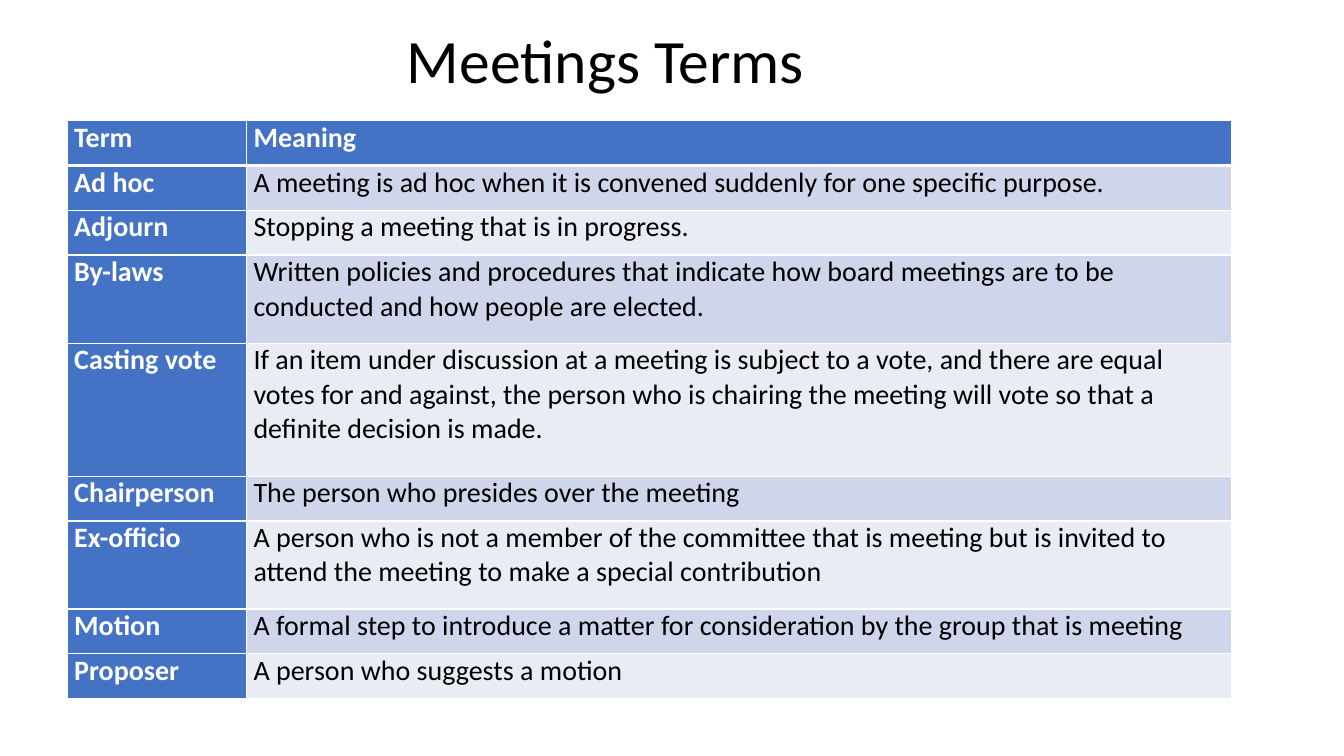
import pptx
import pptx.dml.color
import pptx.enum.text
import pptx.oxml
import pptx.oxml.ns
import pptx.util
from pptx.util import Cm

COLORS = {
    "black": "000000",
    "white": "FFFFFF",
    "blue": "4472C4",
    "dark band": "CFD5EA",
    "light band": "E9EBF5",
}

# Term, meaning and number of text lines the row is sized for
TERMS = [
    ("Term", "Meaning", 1),
    ("Ad hoc", "A meeting is ad hoc when it is convened suddenly for one specific purpose.", 1),
    ("Adjourn", "Stopping a meeting that is in progress.", 1),
    ("By-laws", "Written policies and procedures that indicate how board meetings "
                "are to be conducted and how people are elected.", 2),
    ("Casting vote", "If an item under discussion at a meeting is subject to a vote, "
                     "and there are equal votes for and against, the person who is "
                     "chairing the meeting will vote so that a definite decision is made.", 3),
    ("Chairperson", "The person who presides over the meeting", 1),
    ("Ex-officio", "A person who is not a member of the committee that is meeting but is "
                   "invited to attend the meeting to make a special contribution", 2),
    ("Motion", "A formal step to introduce a matter for consideration by the group "
               "that is meeting", 1),
    ("Proposer", "A person who suggests a motion", 1),
]
ROW_HEIGHTS = {1: Cm(1.13), 2: Cm(2.22), 3: Cm(3.35)}
COLUMN_WIDTHS = [Cm(4.52), Cm(24.82)]


class SlideBuilder:
    font_name = "Calibri"
    title_size = 44
    table_size = 20

    def __init__(self, presentation):
        self.slide = presentation.slides.add_slide(presentation.slide_layouts[5])

    def add_run(self, paragraph, text, size, color, bold=False):
        run = paragraph.add_run()
        run.text = text
        run.font.name = self.font_name
        run.font.size = pptx.util.Pt(size)
        run.font.bold = bold
        run.font.color.rgb = pptx.dml.color.RGBColor.from_string(COLORS[color])

    def add_title(self, text, left, top, width, height):
        title = self.slide.shapes.title
        title.left, title.top, title.width, title.height = left, top, width, height
        title.text_frame.vertical_anchor = pptx.enum.text.MSO_ANCHOR.MIDDLE
        paragraph = title.text_frame.paragraphs[0]
        paragraph.alignment = pptx.enum.text.PP_ALIGN.LEFT
        paragraph.line_spacing = 0.9
        self.add_run(paragraph, text, self.title_size, "black")

    def set_borders(self, cell, top=1, bottom=1):
        """Draw white borders, with widths in points."""
        properties = cell._tc.get_or_add_tcPr()
        for side, width in (("L", 1), ("R", 1), ("T", top), ("B", bottom)):
            properties.append(pptx.oxml.parse_xml(
                f'<a:ln{side} {pptx.oxml.ns.nsdecls("a")} w="{pptx.util.Pt(width)}">'
                f'<a:solidFill><a:srgbClr val="{COLORS["white"]}"/></a:solidFill>'
                f'</a:ln{side}>'))

    def fill_cell(self, cell, text, fill, color, bold):
        cell.margin_left = cell.margin_right = Cm(0.18)
        cell.margin_top = cell.margin_bottom = 0
        cell.fill.solid()
        cell.fill.fore_color.rgb = pptx.dml.color.RGBColor.from_string(COLORS[fill])
        self.add_run(cell.text_frame.paragraphs[0], text, self.table_size, color, bold)

    def add_terms_table(self, terms, left, top):
        heights = [ROW_HEIGHTS[lines] for _, _, lines in terms]
        table = self.slide.shapes.add_table(
            len(terms), len(COLUMN_WIDTHS), left, top,
            sum(COLUMN_WIDTHS), sum(heights)).table
        table.first_col = True
        for column, width in zip(table.columns, COLUMN_WIDTHS):
            column.width = width
        for row_index, (term, meaning, _) in enumerate(terms):
            table.rows[row_index].height = heights[row_index]
            for column_index, text in enumerate((term, meaning)):
                cell = table.cell(row_index, column_index)
                is_heading = row_index == 0 or column_index == 0
                band = "dark band" if row_index % 2 else "light band"
                self.set_borders(cell, top=3 if row_index == 1 else 1,
                                 bottom=3 if row_index == 0 else 1)
                self.fill_cell(cell, text,
                               fill="blue" if is_heading else band,
                               color="white" if is_heading else "black",
                               bold=is_heading)


def main():
    presentation = pptx.Presentation()
    presentation.slide_width = Cm(33.87)
    presentation.slide_height = Cm(19.05)
    builder = SlideBuilder(presentation)
    builder.add_title("Meetings Terms", Cm(10), Cm(0.28), Cm(16.36), Cm(2.62))
    builder.add_terms_table(TERMS, Cm(1.69), Cm(3.04))
    presentation.save("out.pptx")


if __name__ == "__main__":
    main()
